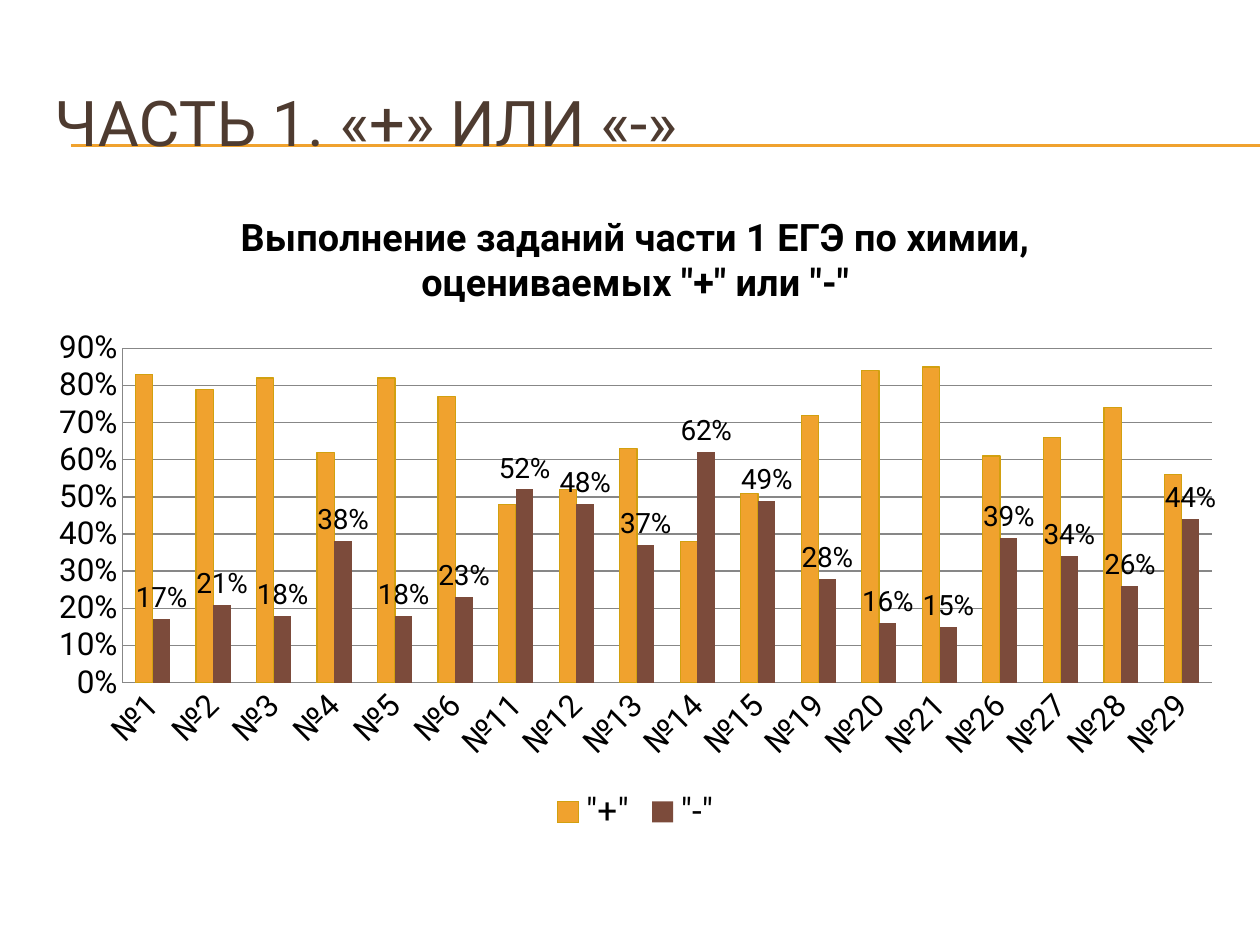
import pptx
import pptx.chart.data
import pptx.dml.color
import pptx.enum.chart
import pptx.enum.shapes
import pptx.enum.text
import pptx.oxml
import pptx.oxml.ns
import pptx.util

SCALE = 914400 / 126
FONT = "Roboto"
COLORS = {
    "page": "FFFFFF",
    "title": "4E3B30",
    "text": "000000",
    "plus": "F0A22E",
    "plus_edge": "D2A010",
    "minus": "7C4B3B",
    "grid": "878787",
}

TASKS = [1, 2, 3, 4, 5, 6, 11, 12, 13, 14, 15, 19, 20, 21, 26, 27, 28, 29]
PLUS = [0.83, 0.79, 0.82, 0.62, 0.82, 0.77, 0.48, 0.52, 0.63,
        0.38, 0.51, 0.72, 0.84, 0.85, 0.61, 0.66, 0.74, 0.56]
MINUS = [0.17, 0.21, 0.18, 0.38, 0.18, 0.23, 0.52, 0.48, 0.37,
         0.62, 0.49, 0.28, 0.16, 0.15, 0.39, 0.34, 0.26, 0.44]


def px(length):
    return pptx.util.Emu(round(length * SCALE))


def color(name):
    return pptx.dml.color.RGBColor.from_string(COLORS[name])


def style_font(font, size, name="text", bold=False):
    font.name = FONT
    font.size = pptx.util.Pt(size)
    font.bold = bold
    font.color.rgb = color(name)


def style_line(line, name, width=0.75):
    line.color.rgb = color(name)
    line.width = pptx.util.Pt(width)


def add_text(page, text, left, top, width, height, size, name):
    box = page.shapes.add_textbox(px(left), px(top), px(width), px(height))
    frame = box.text_frame
    frame.word_wrap = True
    frame.vertical_anchor = pptx.enum.text.MSO_ANCHOR.MIDDLE
    span = frame.paragraphs[0].add_run()
    span.text = text
    style_font(span.font, size, name)


def add_rule(page, left, right, top):
    rule = page.shapes.add_connector(
        pptx.enum.shapes.MSO_CONNECTOR.STRAIGHT,
        px(left), px(top), px(right), px(top))
    style_line(rule.line, "plus")
    properties = rule._element.spPr
    properties.append(pptx.oxml.parse_xml(
        "<a:effectLst %s/>" % pptx.oxml.ns.nsdecls("a")))


def add_column_chart(page, left, top, width, height):
    data = pptx.chart.data.CategoryChartData(number_format="0%")
    data.categories = [f"№{task}" for task in TASKS]
    data.add_series('"+"', PLUS)
    data.add_series('"-"', MINUS)
    chart = page.shapes.add_chart(
        pptx.enum.chart.XL_CHART_TYPE.COLUMN_CLUSTERED,
        px(left), px(top), px(width), px(height), data).chart
    style_font(chart.font, 18)

    # Heading and legend
    chart.has_title = True
    para = chart.chart_title.text_frame.paragraphs[0]
    span = para.add_run()
    span.text = 'Выполнение заданий части 1 ЕГЭ по химии, оцениваемых "+" или "-"'
    style_font(span.font, 21.6, bold=True)
    chart.chart_title.include_in_layout = False
    chart.has_legend = True
    chart.legend.position = pptx.enum.chart.XL_LEGEND_POSITION.BOTTOM
    chart.legend.include_in_layout = False
    style_font(chart.legend.font, 20)

    # Axes
    for axis in (chart.category_axis, chart.value_axis):
        axis.major_tick_mark = pptx.enum.chart.XL_TICK_MARK.NONE
        axis.minor_tick_mark = pptx.enum.chart.XL_TICK_MARK.NONE
        style_line(axis.format.line, "grid")
        style_font(axis.tick_labels.font, 18)
    scale = chart.value_axis
    scale.minimum_scale, scale.maximum_scale, scale.major_unit = 0, 0.9, 0.1
    scale.tick_labels.number_format = "0%"
    scale.tick_labels.number_format_is_linked = False
    scale.has_major_gridlines = True
    style_line(scale.major_gridlines.format.line, "grid")

    # Columns
    plot = chart.plots[0]
    plot.gap_width = 150
    plot.overlap = 0
    plot.vary_by_categories = False
    plus, minus = plot.series
    for series, name in ((plus, "plus"), (minus, "minus")):
        series.invert_if_negative = False
        series.format.fill.solid()
        series.format.fill.fore_color.rgb = color(name)
    style_line(plus.format.line, "plus_edge")

    labels = minus.data_labels
    labels.show_value = True
    labels.number_format = "0%"
    labels.number_format_is_linked = False
    labels.position = pptx.enum.chart.XL_LABEL_POSITION.OUTSIDE_END
    style_font(labels.font, 16)


def main():
    deck = pptx.Presentation()
    deck.slide_width, deck.slide_height = px(1260), px(945)
    page = deck.slides.add_slide(deck.slide_layouts[6])
    page.background.fill.solid()
    page.background.fill.fore_color.rgb = color("page")

    # Double rule under the title
    for top in (145, 146):
        add_rule(page, 71, 1260, top)

    add_text(page, "ЧАСТЬ 1. «+» ИЛИ «-»", 42, 63, 1197, 116, 36, "title")
    add_column_chart(page, 35, 185, 1201, 655)
    deck.save("out.pptx")


if __name__ == "__main__":
    main()
